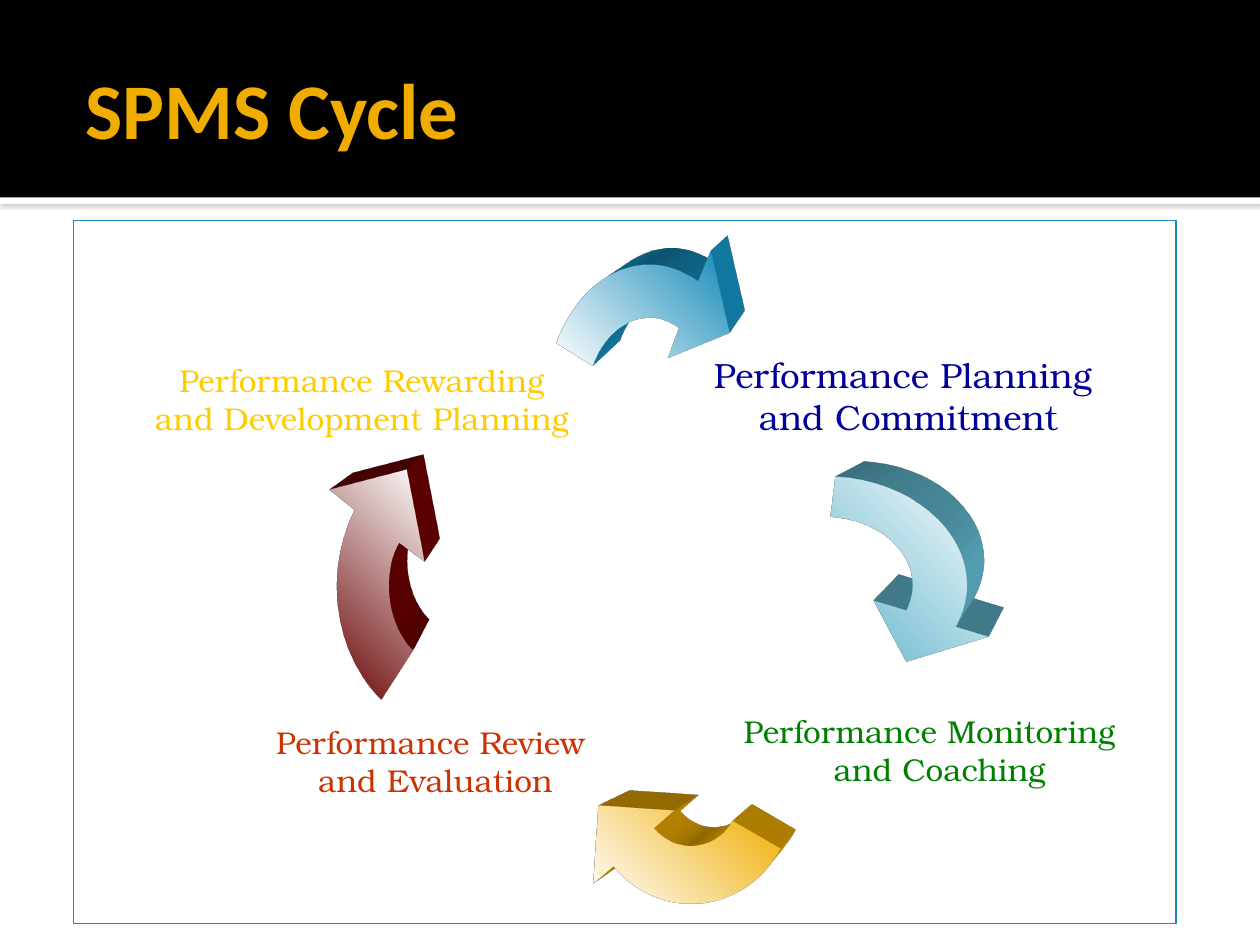
from dataclasses import dataclass
from math import cos, radians, sin

from lxml import etree
from pptx import Presentation
from pptx.dml.color import RGBColor
from pptx.enum.shapes import MSO_SHAPE
from pptx.enum.text import MSO_ANCHOR, PP_ALIGN
from pptx.oxml import parse_xml
from pptx.util import Cm, Pt

RECTANGLE = MSO_SHAPE.RECTANGLE
MIDDLE, TOP = MSO_ANCHOR.MIDDLE, MSO_ANCHOR.TOP
LEFT, CENTER = PP_ALIGN.LEFT, PP_ALIGN.CENTER
TITLE_ONLY = 5
GRID = 0.0254           # cm in one unit of the arrow outlines
DRAWING_NS = "http://schemas.openxmlformats.org/drawingml/2006/main"
A = f"{{{DRAWING_NS}}}"


@dataclass(frozen=True)
class Theme:
    band: str = "000000"
    strip: str = "FFFFFF"
    title: str = "F0AD00"
    frame: str = "168BBA"
    arrow_start: str = "FFFFFF"
    title_font: str = "Calibri"
    label_font: str = "TeX Gyre Bonum"
    title_size: int = 45
    label_size: int = 18
    lead_size: int = 20


THEME = Theme()

# Arrows: offset in cm, colour, rotation, then centre and size of the box and
# the outline in grid units: two numbers make a line, six a Bézier curve
ARROWS = [
    ((9.73, 0.61), "168BBA", 0, (73.5, 119), (163, 216),
     [(97, 61), (90, 56, 82, 53, 74, 53), (55, 53, 37, 68, 29, 91), (0, 73),
      (14, 35, 42, 11, 74, 11), (87, 11, 100, 16, 112, 24),
      (122, 0), (137, 65), (88, 85), (97, 61)]),
    ((15.27, 5.16), "60B5CC", 90, (-5, 85.5), (172, 225),
     [(60, 106), (63, 100, 65, 93, 65, 86), (65, 58, 37, 34, 0, 32), (4, 0),
      (62, 3, 108, 41, 108, 86), (108, 97, 105, 108, 99, 119),
      (125, 127), (60, 147), (34, 98), (60, 106)]),
    ((10.49, 11.79), "F0AD00", 180, (77.5, -8), (163, 172),
     [(48, 18), (56, 27, 66, 32, 77, 32), (91, 32, 104, 24, 110, 12), (148, 34),
      (134, 61, 107, 78, 77, 78), (54, 78, 31, 67, 16, 48),
      (0, 62), (4, 0), (64, 4), (48, 18)]),
    ((5.16, 5.03), "680000", 270, (99.5, 93), (229, 188),
     [(55, 58), (49, 68, 47, 80, 47, 93), (47, 112, 54, 131, 66, 143), (41, 182),
      (19, 160, 6, 127, 6, 93), (6, 71, 11, 50, 20, 32),
      (0, 16), (61, 0), (75, 73), (55, 58)]),
]

# Labels: box in cm within the frame, lines, colour
LABELS = [
    ((3.81, 10.06, 6.98, 1.65), ("Performance Review ", "and Evaluation"), "CC3300"),
    ((1.27, 2.77, 9.09, 1.65),
     ("Performance Rewarding", "and Development Planning"), "FFCC00"),
    ((13.13, 9.85, 8.46, 1.65),
     ("Performance Monitoring ", " and Coaching"), "008000"),
]
LEAD_LABEL = ((12.49, 2.55, 8.69, 2.06),
              ("Performance Planning ", "and Commitment"), "000099")


def color(code):
    return RGBColor.from_string(code)


def add_block(page, box, fill):
    block = page.shapes.add_shape(RECTANGLE, *map(Cm, box))
    block.shadow.inherit = False
    block.fill.solid()
    block.fill.fore_color.rgb = color(fill)
    block.line.fill.background()
    return block


def write_line(para, text, size, font, code, align, bold=False):
    para.alignment = align
    span = para.add_run()
    span.text = text
    span.font.size, span.font.name, span.font.bold = Pt(size), font, bold
    span.font.color.rgb = color(code)


def add_header(page, box):
    """Black band with the title, and a shadowed white strip below it."""
    left, top, width, height = box
    strip = add_block(page, (left, top + height, width, 0.13), THEME.strip)
    effects = strip._element.spPr.find(A + "effectLst")
    effects.append(parse_xml(
        f'<a:outerShdw xmlns:a="{DRAWING_NS}" blurRad="31750" dist="10160" dir="5400000">'
        '<a:srgbClr val="808080"><a:alpha val="60000"/></a:srgbClr></a:outerShdw>'))
    add_block(page, box, THEME.band)

    title = page.shapes.title
    title.left, title.top = Cm(left + 1.48), Cm(top + 0.43)
    title.width, title.height = Cm(22.66), Cm(3.48)
    frame = title.text_frame
    frame.vertical_anchor, frame.word_wrap = MIDDLE, True
    frame.margin_left = Cm(0.25)
    frame.margin_right = frame.margin_top = frame.margin_bottom = Cm(0.13)
    write_line(frame.paragraphs[0], "SPMS Cycle", THEME.title_size,
               THEME.title_font, THEME.title, LEFT, bold=True)
    page.shapes._spTree.append(title._element)  # in front of the band


def unturn(segment, rotation, center, size):
    """Points of a segment in the frame of the box before its rotation."""
    turn = radians(-rotation)
    points = []
    for x, y in zip(segment[::2], segment[1::2]):
        x, y = x - center[0], y - center[1]
        points.append((Cm((x * cos(turn) - y * sin(turn) + size[0] / 2) * GRID),
                       Cm((x * sin(turn) + y * cos(turn) + size[1] / 2) * GRID)))
    return points


def bend(shape, size, segments):
    """Give the freeform its curves, measured within the whole box."""
    track = shape._element.find(f".//{A}path")
    track.set("w", str(Cm(size[0] * GRID)))
    track.set("h", str(Cm(size[1] * GRID)))
    for command in list(track):
        track.remove(command)
    for index, points in enumerate(segments):
        kind = "moveTo" if index == 0 else "lnTo" if len(points) == 1 else "cubicBezTo"
        command = etree.SubElement(track, A + kind)
        for x, y in points:
            etree.SubElement(command, A + "pt", x=str(x), y=str(y))
    etree.SubElement(track, A + "close")


def extrude(shape, code):
    """Depth towards the top right, lit from below."""
    scene = (f'<a:scene3d xmlns:a="{DRAWING_NS}">'
             '<a:camera prst="legacyPerspectiveTopRight"/>'
             '<a:lightRig rig="legacyFlat3" dir="b"/></a:scene3d>')
    solid = (f'<a:sp3d xmlns:a="{DRAWING_NS}" extrusionH="887400" prstMaterial="legacyMatte">'
             '<a:bevelT w="13500" h="13500" prst="angle"/>'
             '<a:bevelB w="13500" h="13500" prst="angle"/>'
             f'<a:extrusionClr><a:srgbClr val="{code}"/></a:extrusionClr></a:sp3d>')
    for part in (scene, solid):
        shape._element.spPr.append(parse_xml(part))


def add_arrow(page, origin, code, rotation, center, size, outline):
    segments = [unturn(segment, rotation, center, size) for segment in outline]
    corners = [points[-1] for points in segments]
    builder = page.shapes.build_freeform(*corners[0])
    builder.add_line_segments(corners[1:], close=True)
    arrow = builder.convert_to_shape()
    bend(arrow, size, segments)
    arrow.left, arrow.top = (Cm(start + (middle - extent / 2) * GRID)
                             for start, middle, extent in zip(origin, center, size))
    arrow.width, arrow.height = (Cm(extent * GRID) for extent in size)
    arrow.rotation = rotation
    arrow.shadow.inherit = False
    arrow.line.fill.background()
    arrow.fill.gradient()
    arrow.fill.gradient_angle = 45
    ends = (THEME.arrow_start, code)
    for stop, shade, position in zip(arrow.fill.gradient_stops, ends, (0, 1)):
        stop.color.rgb = color(shade)
        stop.position = position
    extrude(arrow, code)


def add_label(page, box, lines, code, size, compact=True):
    frame = page.shapes.add_textbox(*map(Cm, box)).text_frame
    frame.word_wrap = not compact
    frame.vertical_anchor = MIDDLE if compact else TOP
    if compact:
        frame.margin_left = frame.margin_right = 0
        frame.margin_top = frame.margin_bottom = 0
    for index, text in enumerate(lines):
        para = frame.add_paragraph() if index else frame.paragraphs[0]
        write_line(para, text, size, THEME.label_font, code, CENTER)


def add_cycle(page, box):
    """Framed cycle of four arrows and four stage labels."""
    left, top = box[:2]
    border = page.shapes.add_shape(RECTANGLE, *map(Cm, box))
    border.shadow.inherit = False
    border.fill.background()
    border.line.color.rgb = color(THEME.frame)
    border.line.width = Pt(0.75)
    for (x, y), *style in ARROWS:
        add_arrow(page, (left + x, top + y), *style)
    for (x, y, *size), lines, code in LABELS:
        add_label(page, (left + x, top + y, *size), lines, code, THEME.label_size)
    (x, y, *size), lines, code = LEAD_LABEL
    add_label(page, (left + x, top + y, *size), lines, code, THEME.lead_size, compact=False)


def main():
    deck = Presentation()
    deck.slide_width, deck.slide_height = Cm(25.4), Cm(19.05)
    page = deck.slides.add_slide(deck.slide_layouts[TITLE_ONLY])
    add_header(page, (0, 0, 25.4, 3.98))
    add_cycle(page, (1.48, 4.45, 22.23, 14.17))
    deck.save("out.pptx")


if __name__ == "__main__":
    main()
